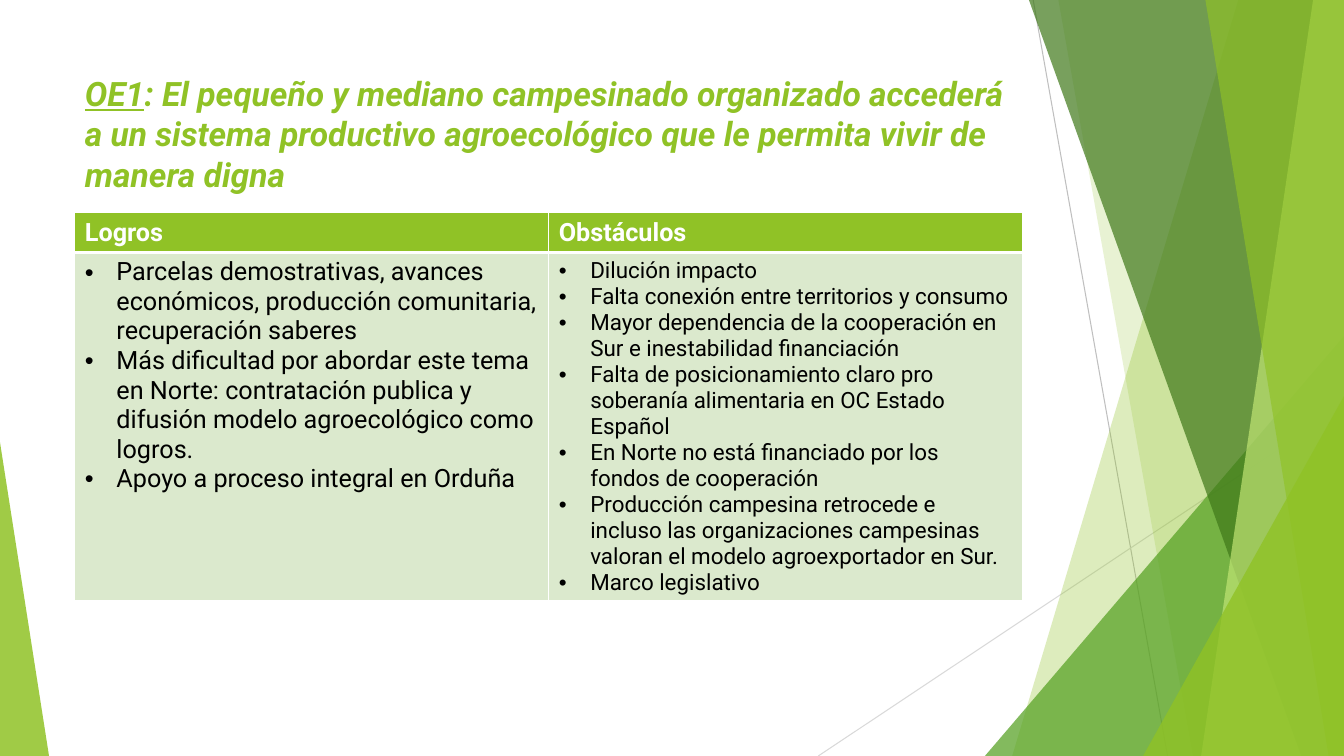
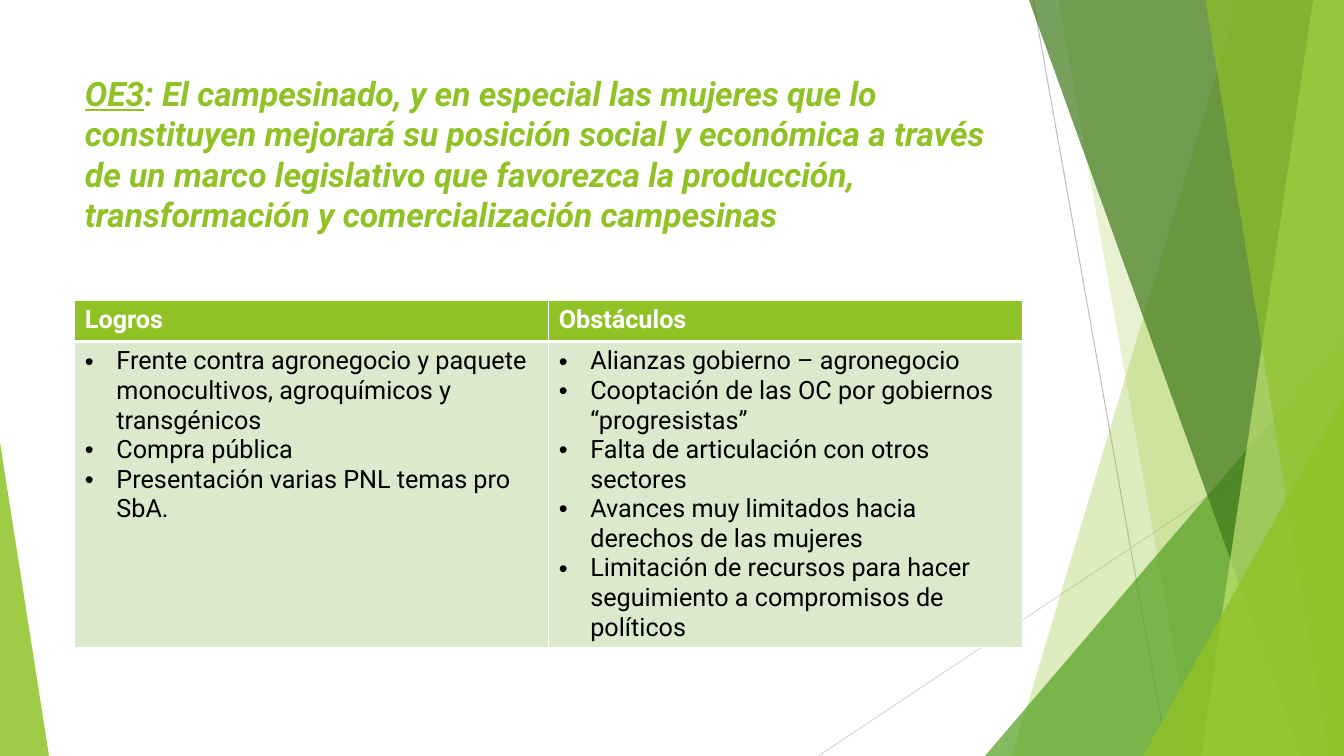
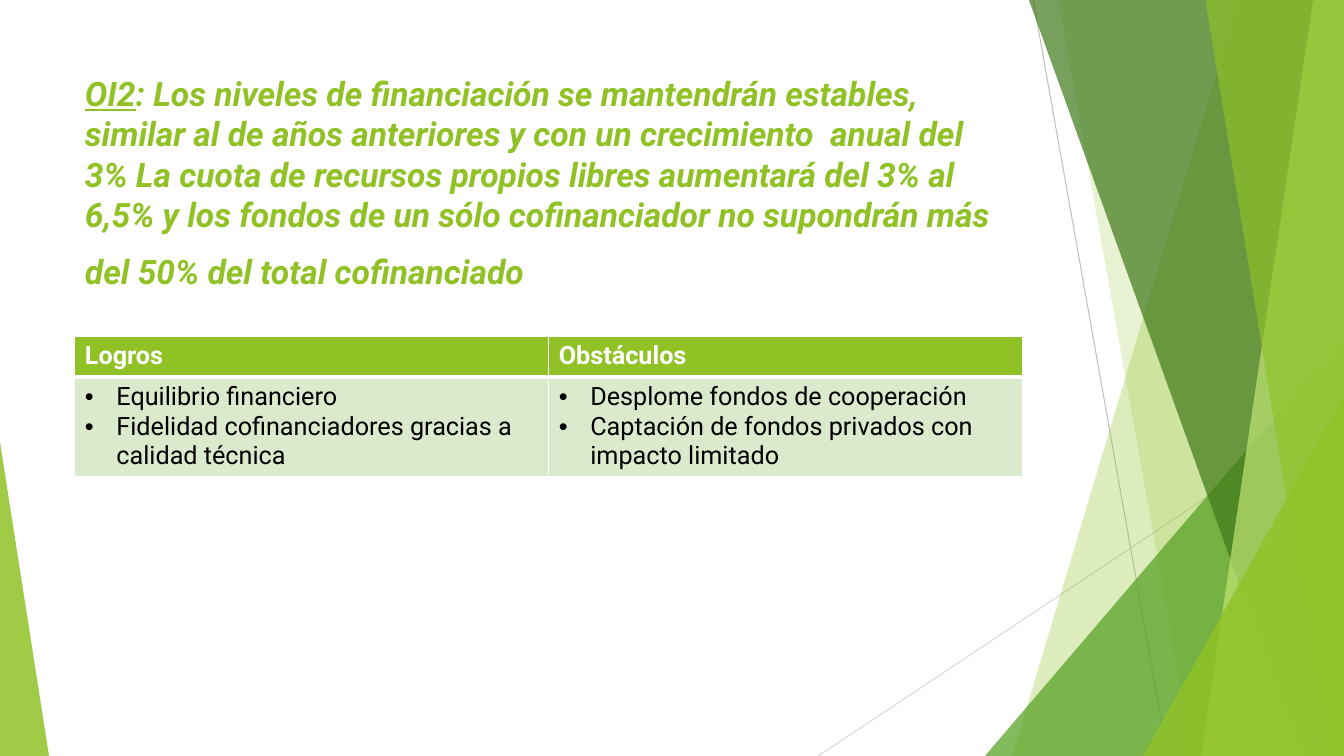
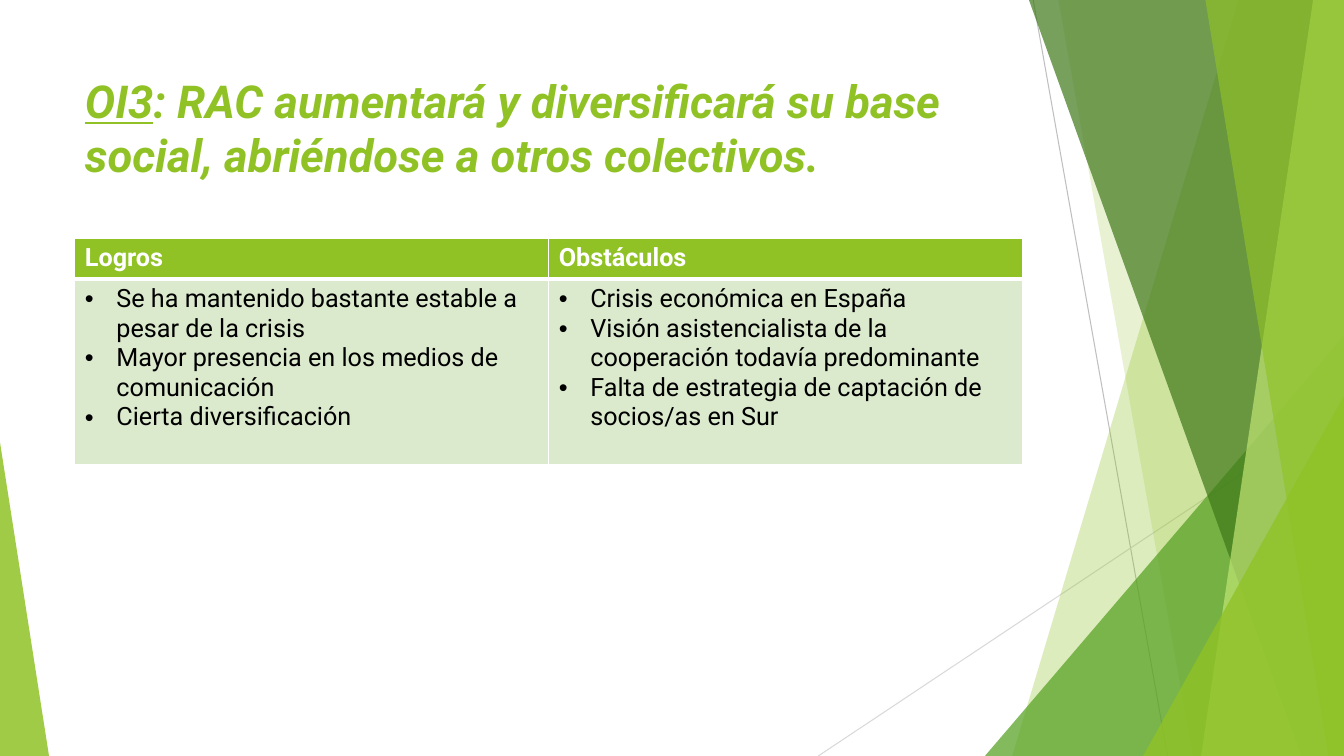
from collections import namedtuple

from lxml.etree import SubElement
from pptx import Presentation
from pptx.dml.color import RGBColor
from pptx.enum.shapes import MSO_CONNECTOR, MSO_SHAPE
from pptx.enum.text import MSO_ANCHOR, MSO_AUTO_SIZE, PP_ALIGN
from pptx.oxml.ns import qn
from pptx.util import Pt

Box = namedtuple("Box", "left top width height")
Panel = namedtuple("Panel", "top_x bottom_x color opacity")
Triangle = namedtuple("Triangle", "left top width apex color opacity")
Objective = namedtuple(
    "Objective", "code title title_size table_top header_height table_height achievements obstacles obstacle_size"
)

GREEN = RGBColor(0x90, 0xC2, 0x26)
MID_GREEN = RGBColor(0x54, 0xA0, 0x21)
DARK_GREEN = RGBColor(0x3F, 0x78, 0x19)
LIGHT_GREEN = RGBColor(0xC0, 0xE4, 0x74)
PALE_GREEN = RGBColor(0xDB, 0xE9, 0xCD)
GRAY = RGBColor(0xBF, 0xBF, 0xBF)
LIGHT_GRAY = RGBColor(0xD9, 0xD9, 0xD9)
WHITE = RGBColor(0xFF, 0xFF, 0xFF)
BLACK = RGBColor(0, 0, 0)

FONT = "Roboto"
BODY_SIZE = 18
BULLET_INDENT = Pt(22.5)
HEADINGS = ("Logros", "Obstáculos")

PAGE = Box(0, 0, 960, 540)
TITLE_BOX = Box(53.5, 48.5, 677, 103.5)

THIN_LINES = [
    ((738, 0), (834, 540), GRAY),
    ((960, 290), (584.5, 540), LIGHT_GRAY),
]
FACETS = [
    Panel(884.5, 723, GREEN, 30),
    Panel(756, 852, GREEN, 20),
    Triangle(703.5, 240, 256.5, 1, MID_GREEN, 72),
    Panel(735, 929.5, DARK_GREEN, 70),
    Panel(938, 858, LIGHT_GREEN, 70),
    Panel(861, 949, GREEN, 65),
    Triangle(816.5, 283, 143.5, 1, GREEN, 80),
    Triangle(0, 316, 35, 0, GREEN, 85),
]

OBJECTIVES = [
    Objective(
        "OE1",
        [": El pequeño y mediano campesinado organizado accederá a un sistema productivo agroecológico "
         "que le permita vivir de manera digna"],
        24, 152, 28, 276,
        [
            "Parcelas demostrativas, avances económicos, producción comunitaria, recuperación saberes",
            "Más dificultad por abordar este tema en Norte: contratación publica y difusión modelo "
            "agroecológico como logros.",
            "Apoyo a proceso integral en Orduña",
        ],
        [
            "Dilución impacto",
            "Falta conexión entre territorios y consumo",
            "Mayor dependencia de la cooperación en Sur e inestabilidad financiación",
            "Falta de posicionamiento claro pro soberanía alimentaria en OC Estado Español",
            "En Norte no está financiado por los fondos de cooperación",
            "Producción campesina retrocede e incluso las organizaciones campesinas valoran el modelo "
            "agroexportador en Sur.",
            "Marco legislativo",
        ],
        16,
    ),
    Objective(
        "OE3",
        [": El campesinado, y en especial las mujeres que lo constituyen mejorará su posición social y "
         "económica a través de un marco legislativo que favorezca la producción, transformación y "
         "comercialización campesinas"],
        24, 214.5, 29.5, 247.5,
        [
            "Frente contra agronegocio y paquete monocultivos, agroquímicos y transgénicos",
            "Compra pública",
            "Presentación varias PNL temas pro SbA.",
        ],
        [
            "Alianzas gobierno – agronegocio",
            "Cooptación de las OC por gobiernos “progresistas”",
            "Falta de articulación con otros sectores",
            "Avances muy limitados hacia derechos de las mujeres",
            "Limitación de recursos para hacer seguimiento a compromisos de políticos",
        ],
        BODY_SIZE,
    ),
    Objective(
        "OI2",
        [": Los niveles de financiación se mantendrán estables, similar al de años anteriores y con un "
         "crecimiento  anual del 3% La cuota de recursos propios libres aumentará del 3% al 6,5% y los "
         "fondos de un sólo cofinanciador no supondrán más",
         "del 50% del total cofinanciado"],
        24, 240, 29.5, 99,
        [
            "Equilibrio financiero",
            "Fidelidad cofinanciadores gracias a calidad técnica",
        ],
        [
            "Desplome fondos de cooperación",
            "Captación de fondos privados con impacto limitado",
        ],
        BODY_SIZE,
    ),
    Objective(
        "OI3",
        [": RAC aumentará y diversificará su base social, abriéndose a otros colectivos."],
        32.4, 170, 29.5, 162,
        [
            "Se ha mantenido bastante estable a pesar de la crisis",
            "Mayor presencia en los medios de comunicación",
            "Cierta diversificación",
        ],
        [
            "Crisis económica en España",
            "Visión asistencialista de la cooperación todavía predominante",
            "Falta de estrategia de captación de socios/as en Sur",
        ],
        BODY_SIZE,
    ),
]


def add_run(paragraph, text, size, color, bold=False, italic=False, underline=False):
    run = paragraph.add_run()
    run.text = text
    font = run.font
    font.name, font.size = FONT, Pt(size)
    font.bold, font.italic, font.underline = bold, italic, underline
    font.color.rgb = color


def fill_facet(shape, facet):
    shape.shadow.inherit = False
    shape.line.fill.background()
    shape.fill.solid()
    shape.fill.fore_color.rgb = facet.color
    color = shape.element.spPr.find(qn("a:solidFill")).find(qn("a:srgbClr"))
    SubElement(color, qn("a:alpha"), val=str(facet.opacity * 1000))


def add_thin_line(slide, box, start, end, color):
    connector = slide.shapes.add_connector(
        MSO_CONNECTOR.STRAIGHT,
        Pt(box.left + start[0]), Pt(box.top + start[1]),
        Pt(box.left + end[0]), Pt(box.top + end[1]),
    )
    connector.line.color.rgb = color
    connector.line.width = Pt(0.75)
    SubElement(connector.element.spPr, qn("a:effectLst"))
    return connector


def add_panel(slide, box, panel):
    right, bottom = Pt(box.left + box.width), Pt(box.top + box.height)
    builder = slide.shapes.build_freeform(Pt(box.left + panel.top_x), Pt(box.top))
    builder.add_line_segments(
        [(right, Pt(box.top)), (right, bottom), (Pt(box.left + panel.bottom_x), bottom)], close=True
    )
    return builder.convert_to_shape()


def add_triangle(slide, box, triangle):
    shape = slide.shapes.add_shape(
        MSO_SHAPE.ISOSCELES_TRIANGLE,
        Pt(box.left + triangle.left), Pt(box.top + triangle.top),
        Pt(triangle.width), Pt(box.height - triangle.top),
    )
    shape.adjustments[0] = triangle.apex
    return shape


def add_backdrop(slide, box):
    shapes = [add_thin_line(slide, box, *line) for line in THIN_LINES]
    for facet in FACETS:
        draw = add_panel if isinstance(facet, Panel) else add_triangle
        shape = draw(slide, box, facet)
        fill_facet(shape, facet)
        shapes.append(shape)
    return shapes


def move_to_layout(shapes, layout):
    tree = layout.shapes.element
    for position, shape in enumerate(shapes, start=2):
        tree.insert(position, shape.element)


def add_title(slide, box, objective):
    title = slide.shapes.title
    title.left, title.top, title.width, title.height = (Pt(length) for length in box)
    frame = title.text_frame
    frame.word_wrap = True
    frame.auto_size = MSO_AUTO_SIZE.NONE
    frame.vertical_anchor = MSO_ANCHOR.TOP
    for index, text in enumerate(objective.title):
        paragraph = frame.add_paragraph() if index else frame.paragraphs[0]
        paragraph.alignment = PP_ALIGN.LEFT
        if index:
            paragraph.space_before = Pt(12)
        else:
            add_run(paragraph, objective.code, objective.title_size, GREEN, True, True, True)
        add_run(paragraph, text, objective.title_size, GREEN, True, True)


def format_cell(cell, color, top_width, bottom_width):
    properties = cell._tc.get_or_add_tcPr()
    for side, width in (("L", 1), ("R", 1), ("T", top_width), ("B", bottom_width)):
        border = SubElement(properties, qn(f"a:ln{side}"), w=str(Pt(width)))
        fill = SubElement(border, qn("a:solidFill"))
        SubElement(fill, qn("a:srgbClr"), val=str(WHITE))
    cell.fill.solid()
    cell.fill.fore_color.rgb = color


def add_bullets(cell, items, size):
    frame = cell.text_frame
    for index, item in enumerate(items):
        paragraph = frame.add_paragraph() if index else frame.paragraphs[0]
        properties = paragraph._p.get_or_add_pPr()
        properties.set("marL", str(BULLET_INDENT))
        properties.set("indent", str(-BULLET_INDENT))
        SubElement(properties, qn("a:buFont"), typeface="Arial")
        SubElement(properties, qn("a:buChar"), char="•")
        add_run(paragraph, item, size, BLACK)


def add_comparison(slide, box, objective):
    table = slide.shapes.add_table(2, 2, *(Pt(length) for length in box)).table
    table.horz_banding = False
    table.rows[0].height = Pt(objective.header_height)
    table.rows[1].height = Pt(box.height - objective.header_height)
    columns = ((objective.achievements, BODY_SIZE), (objective.obstacles, objective.obstacle_size))
    for column, (heading, (items, size)) in enumerate(zip(HEADINGS, columns)):
        header, body = table.cell(0, column), table.cell(1, column)
        format_cell(header, GREEN, 1, 3)
        add_run(header.text_frame.paragraphs[0], heading, BODY_SIZE, WHITE, bold=True)
        format_cell(body, PALE_GREEN, 3, 1)
        add_bullets(body, items, size)


def add_objective_slide(presentation, layout, objective):
    slide = presentation.slides.add_slide(layout)
    add_title(slide, TITLE_BOX, objective)
    table_box = Box(TITLE_BOX.left, objective.table_top, TITLE_BOX.width, objective.table_height)
    add_comparison(slide, table_box, objective)
    return slide


def main():
    presentation = Presentation()
    presentation.slide_width, presentation.slide_height = Pt(PAGE.width), Pt(PAGE.height)
    layout = presentation.slide_layouts[5]
    slides = [add_objective_slide(presentation, layout, objective) for objective in OBJECTIVES]
    move_to_layout(add_backdrop(slides[0], PAGE), layout)
    presentation.save("out.pptx")


if __name__ == "__main__":
    main()
